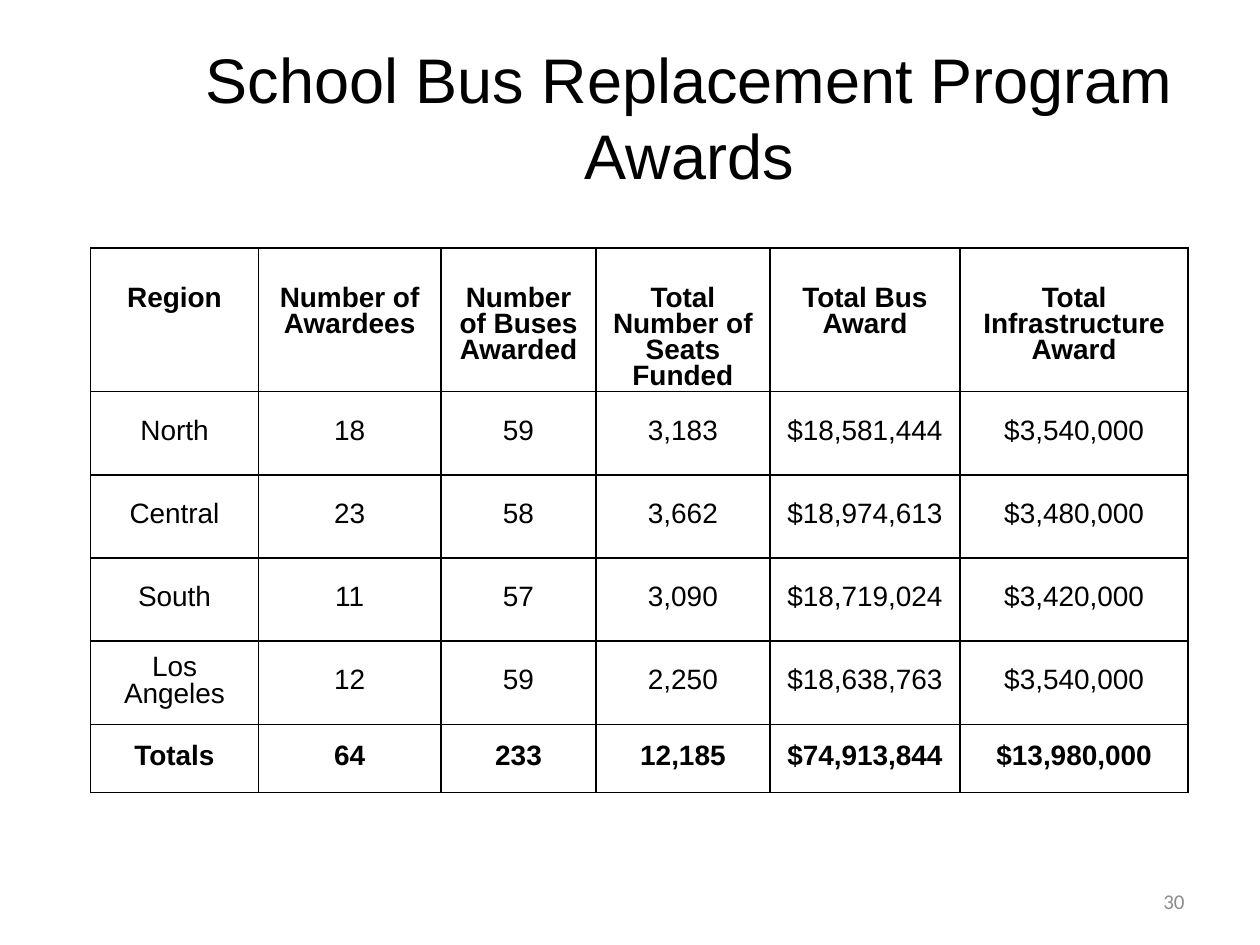
"""Build the school bus replacement awards slide."""
from dataclasses import dataclass

import lxml.etree
import pptx
import pptx.dml.color
import pptx.enum.text
import pptx.oxml.ns
import pptx.util

Inches = pptx.util.Inches
Pt = pptx.util.Pt
ALIGN = pptx.enum.text.PP_ALIGN
ANCHOR = pptx.enum.text.MSO_ANCHOR

TITLE = "School Bus Replacement Program Awards"
PAGE_NUMBER = "30"
HEADERS = ["Region", "Number of Awardees", "Number of Buses Awarded",
           "Total Number of Seats Funded", "Total Bus Award", "Total Infrastructure Award"]
REGIONS = [
    ["North", "18", "59", "3,183", "$18,581,444", "$3,540,000"],
    ["Central", "23", "58", "3,662", "$18,974,613", "$3,480,000"],
    ["South", "11", "57", "3,090", "$18,719,024", "$3,420,000"],
    ["Los Angeles", "12", "59", "2,250", "$18,638,763", "$3,540,000"],
]
TOTALS = ["Totals", "64", "233", "12,185", "$74,913,844", "$13,980,000"]
COLUMN_WIDTHS = [1.33, 1.45, 1.23, 1.38, 1.51, 1.81]
ROW_HEIGHTS = [1.07] + [0.66] * len(REGIONS) + [0.54]


@dataclass(frozen=True)
class Theme:
    ink: str = "000000"
    muted: str = "8C8C8C"
    font: str = "Arial"
    number_font: str = "Calibri"
    title_size: int = 36
    table_size: int = 16
    number_size: int = 12
    line_spacing: int = 15
    space_after: int = 7
    border: int = 1


THEME = Theme()


def write(para, text, size, font, color, align, bold=False):
    para.alignment = align
    span = para.add_run()
    span.text = text
    span.font.size = Pt(size)
    span.font.name = font
    span.font.bold = bold
    span.font.color.rgb = pptx.dml.color.RGBColor.from_string(color)


def add_label(page, place, text, size, font, color, align):
    box = page.shapes.add_textbox(*map(Inches, place))
    box.text_frame.word_wrap = True
    box.text_frame.vertical_anchor = ANCHOR.MIDDLE
    write(box.text_frame.paragraphs[0], text, size, font, color, align)


def draw_borders(cell):
    qn = pptx.oxml.ns.qn
    properties = cell._tc.get_or_add_tcPr()
    for position, side in enumerate(("lnL", "lnR", "lnT", "lnB")):
        line = lxml.etree.Element(qn(f"a:{side}"), w=str(Pt(THEME.border)))
        fill = lxml.etree.SubElement(line, qn("a:solidFill"))
        lxml.etree.SubElement(fill, qn("a:srgbClr"), val=THEME.ink)
        properties.insert(position, line)


def fill_cell(cell, text, is_header, bold):
    cell.fill.background()
    draw_borders(cell)
    cell.margin_left = cell.margin_right = Inches(0.07)
    cell.margin_top = Pt(THEME.line_spacing + THEME.space_after) if is_header else 0
    cell.margin_bottom = 0
    cell.vertical_anchor = ANCHOR.TOP if is_header else ANCHOR.MIDDLE
    para = cell.text_frame.paragraphs[0]
    para.line_spacing = Pt(THEME.line_spacing)
    para.space_after = Pt(THEME.space_after)
    write(para, text, THEME.table_size, THEME.font, THEME.ink, ALIGN.CENTER, bold)


def add_awards_table(page):
    rows = [HEADERS, *REGIONS, TOTALS]
    place = (0.72, 1.97, sum(COLUMN_WIDTHS), sum(ROW_HEIGHTS))
    table = page.shapes.add_table(len(rows), len(HEADERS), *map(Inches, place)).table
    table.first_row = table.horz_banding = False
    for column, width in zip(table.columns, COLUMN_WIDTHS):
        column.width = Inches(width)
    for index, (row, height, texts) in enumerate(zip(table.rows, ROW_HEIGHTS, rows)):
        row.height = Inches(height)
        for cell, text in zip(row.cells, texts):
            fill_cell(cell, text, index == 0, index in (0, len(rows) - 1))


def main():
    deck = pptx.Presentation()
    deck.slide_width, deck.slide_height = Inches(10), Inches(7.5)
    page = deck.slides.add_slide(deck.slide_layouts[6])
    add_label(page, (1.44, 0.3, 8.06, 1.25), TITLE,
              THEME.title_size, THEME.font, THEME.ink, ALIGN.CENTER)
    add_awards_table(page)
    add_label(page, (7.17, 6.95, 2.33, 0.4), PAGE_NUMBER,
              THEME.number_size, THEME.number_font, THEME.muted, ALIGN.RIGHT)
    deck.save("out.pptx")


if __name__ == "__main__":
    main()
